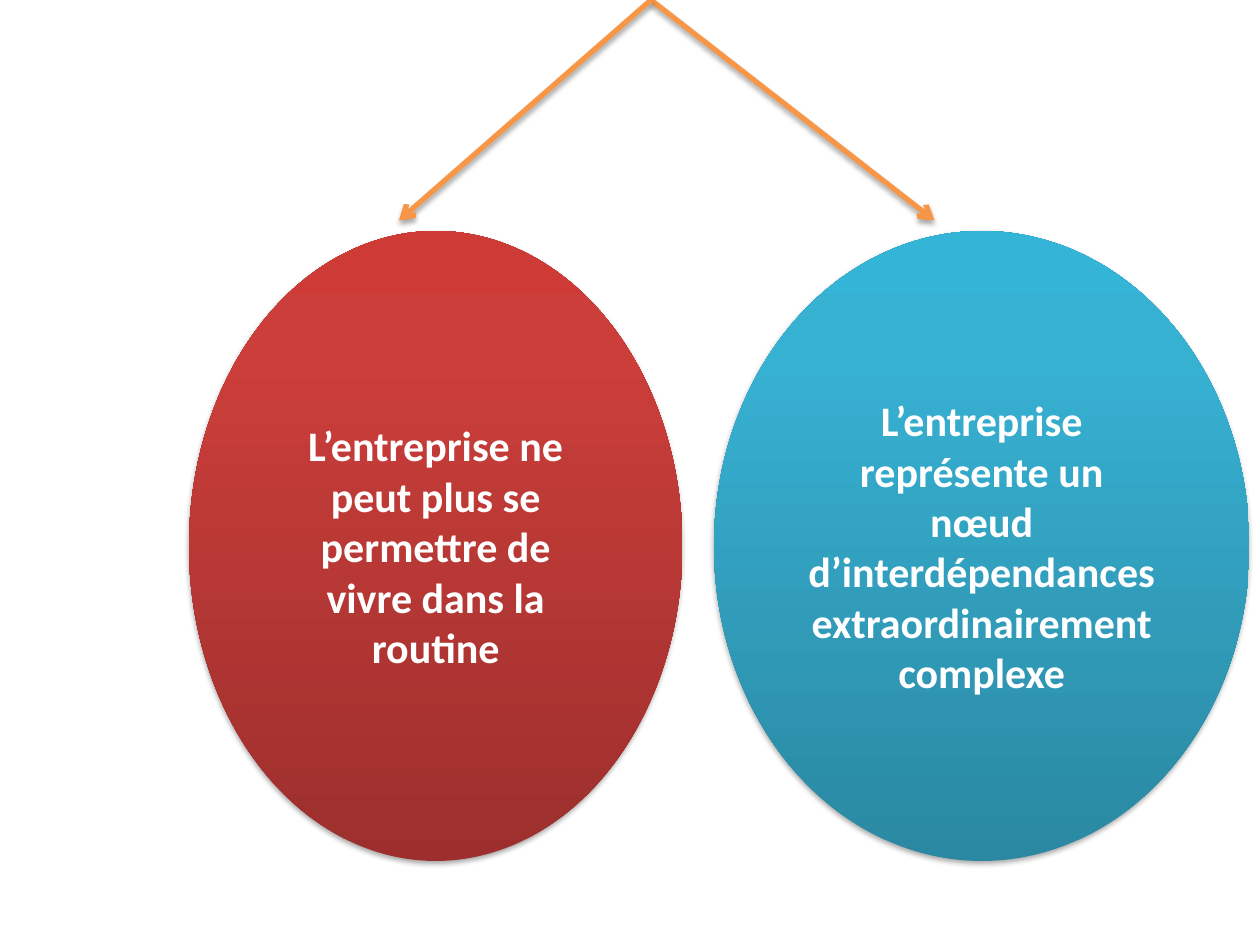
import dataclasses

import lxml.etree
import pptx
import pptx.dml.color
import pptx.enum.shapes
import pptx.enum.text
import pptx.oxml
import pptx.oxml.ns
import pptx.util

Pt = pptx.util.Pt
RGB = pptx.dml.color.RGBColor.from_string
qn = pptx.oxml.ns.qn


@dataclasses.dataclass(frozen=True)
class Theme:
    font: str = "Calibri"
    size: int = 24
    text: str = "FFFFFF"
    arrow: str = "F79646"
    width: int = 3
    shade: str = "000000"
    red: tuple = ((0, "9C2F2D"), (80, "CB3E3A"), (100, "CE3B37"))
    blue: tuple = ((0, "2A88A2"), (80, "37B1D2"), (100, "34B4D6"))


THEME = Theme()


def add_shadow(shape):
    """Give a shape or connector a soft shadow below; call after its line is set."""
    space = pptx.oxml.ns.nsdecls("a")
    shape._element.spPr.append(pptx.oxml.parse_xml(
        f'<a:effectLst {space}><a:outerShdw blurRad="{Pt(3.1)}" dist="{Pt(1.8)}" '
        f'dir="5400000" rotWithShape="0"><a:srgbClr val="{THEME.shade}">'
        '<a:alpha val="35000"/></a:srgbClr></a:outerShdw></a:effectLst>'))


def fill_up(shape, stops):
    """Fill with a gradient that runs from bottom to top."""
    shape.fill.gradient()
    shape.fill.gradient_angle = 90
    marks = shape._element.spPr.find(qn("a:gradFill")).find(qn("a:gsLst"))
    for mark in list(marks):
        marks.remove(mark)
    for place, color in stops:
        mark = lxml.etree.SubElement(marks, qn("a:gs"), pos=str(place * 1000))
        lxml.etree.SubElement(mark, qn("a:srgbClr"), val=color)


def add_arrow(slide, start, end):
    arrow = slide.shapes.add_connector(
        pptx.enum.shapes.MSO_CONNECTOR.STRAIGHT, *map(Pt, start + end))
    arrow.line.color.rgb = RGB(THEME.arrow)
    arrow.line.width = Pt(THEME.width)
    lxml.etree.SubElement(arrow.line._get_or_add_ln(), qn("a:tailEnd"), type="arrow")
    add_shadow(arrow)


def add_oval(slide, box, stops, text):
    oval = slide.shapes.add_shape(
        pptx.enum.shapes.MSO_SHAPE.OVAL, *map(Pt, box))
    fill_up(oval, stops)
    oval.line.fill.background()
    add_shadow(oval)
    frame = oval.text_frame
    frame.word_wrap = True
    frame.vertical_anchor = pptx.enum.text.MSO_ANCHOR.MIDDLE
    frame.text = text
    para = frame.paragraphs[0]
    para.alignment = pptx.enum.text.PP_ALIGN.CENTER
    font = para.runs[0].font
    font.name, font.size, font.bold = THEME.font, Pt(THEME.size), True
    font.color.rgb = RGB(THEME.text)


def add_fork(slide, box):
    """Draw two arrows from the top edge of the box to its lower corners."""
    left, top, width, height = box
    peak = (left + 144, top)
    for side in (left + width, left):
        add_arrow(slide, peak, (side, top + height))


def add_pair(slide, box):
    """Place the two ovals at the left and right ends of the box."""
    left, top, width, height = box
    small, large = 282, 306
    add_oval(slide, (left + width - large, top, large, height), THEME.blue,
             "L’entreprise représente un nœud d’interdépendances "
             "extraordinairement complexe")
    add_oval(slide, (left, top, small, height), THEME.red,
             "L’entreprise ne peut plus se permettre de vivre dans la routine")


def main():
    deck = pptx.Presentation()
    deck.slide_width, deck.slide_height = Pt(720), Pt(540)
    slide = deck.slides.add_slide(deck.slide_layouts[6])
    add_fork(slide, (228, 0, 306, 126))
    add_pair(slide, (108, 132, 606, 360))
    deck.save("out.pptx")


if __name__ == "__main__":
    main()
